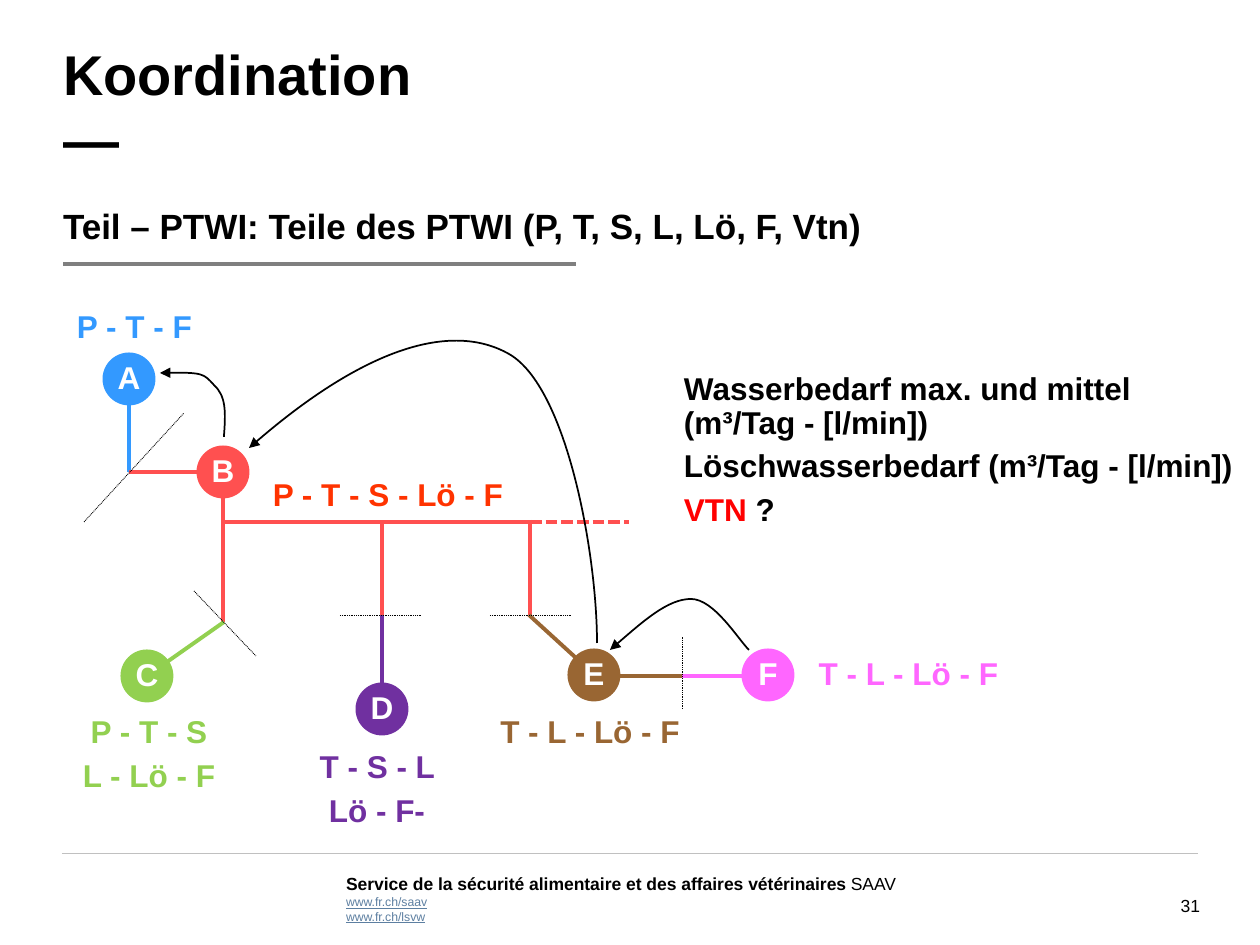
from lxml import etree
from pptx import Presentation
from pptx.dml.color import RGBColor
from pptx.enum.dml import MSO_LINE
from pptx.enum.shapes import MSO_CONNECTOR, MSO_SHAPE
from pptx.enum.text import MSO_ANCHOR, PP_ALIGN
from pptx.oxml.ns import qn
from pptx.util import Pt

STRAIGHT = MSO_CONNECTOR.STRAIGHT
OVAL = MSO_SHAPE.OVAL
TOP, MIDDLE = MSO_ANCHOR.TOP, MSO_ANCHOR.MIDDLE
LEFT, CENTER, RIGHT = PP_ALIGN.LEFT, PP_ALIGN.CENTER, PP_ALIGN.RIGHT
DOTTED, DASHED = MSO_LINE.ROUND_DOT, MSO_LINE.SQUARE_DOT

EMU_PER_PX = 914400 / 126
FONT = "Arial"
NODE_SIZE = 49
COLORS = {
    "text": "000000", "white": "FFFFFF", "alert": "FF0000",
    "link": "5D7FA1", "rule": "7F7F7F", "footer_rule": "C0C0C0",
    "A": "3399FF", "B": "FF5050", "B_label": "FF3300", "C": "92D050",
    "D": "7030A0", "E": "996633", "F": "FF66FF",
}
NODES = {"A": (129, 379), "B": (223, 472), "C": (147, 676),
         "D": (382, 709), "E": (594, 675), "F": (768, 675)}
PIPES = [
    ("A", 129, 378, 129, 472),
    ("B", 223, 472, 129, 472),
    ("B", 223, 483, 223, 522),
    ("B", 223, 522, 530, 522),
    ("B", 223, 522, 223, 622),
    ("B", 382, 522, 382, 616),
    ("B", 530, 520, 530, 615),
    ("C", 147, 676, 224, 622),
    ("D", 382, 709, 382, 615),
    ("E", 682, 676, 594, 676),
    ("E", 598, 678, 529, 615),
    ("F", 768, 676, 682, 676),
]
BOUNDARIES = [
    (84, 522, 184, 413),
    (194, 591, 256, 656),
    (340, 615, 422, 615),
    (490, 615, 571, 615),
    (682, 709, 682, 636),
]
LABELS = [
    ("A", ["P - T - F"], 33, 312, 203),
    ("B_label", ["P - T - S - Lö - F"], 250, 480, 276),
    ("C", ["P - T - S", "L - Lö - F"], 25, 717, 248),
    ("D", ["T - S - L ", "Lö - F- "], 273, 752, 217),
    ("E", ["T - L - Lö - F "], 486, 717, 217),
    ("F", ["T - L - Lö - F"], 800, 659, 217),
]
ARROWS = [
    [(610, 650), (639, 625), (668, 599), (691, 599),
     (714, 599), (738, 639), (749, 650)],
    [(249, 448), (360, 350), (451, 321), (509, 354),
     (567, 387), (597, 554), (597, 643)],
    [(160, 373), (203, 372), (204, 374), (214, 385),
     (226, 396), (226, 411), (224, 437)],
]


def px(*lengths):
    return [round(length * EMU_PER_PX) for length in lengths]


def rgb(name):
    return RGBColor.from_string(COLORS[name])


def format_run(run, size, color, bold=True):
    run.font.name = FONT
    run.font.size = Pt(size)
    run.font.bold = bold
    run.font.color.rgb = rgb(color)


def prepare_frame(frame, anchor=TOP):
    frame.margin_left = frame.margin_right = 0
    frame.margin_top = frame.margin_bottom = 0
    frame.vertical_anchor = anchor
    frame.word_wrap = True


def format_frame(frame, size, color, align=LEFT, spacing=None, after=0, bold=True):
    for paragraph in frame.paragraphs:
        paragraph.alignment = align
        paragraph.space_after = Pt(after)
        if spacing:
            paragraph.line_spacing = Pt(spacing)
        for run in paragraph.runs:
            format_run(run, size, color, bold)


def add_text(slide, lines, box, size, color, **style):
    frame = slide.shapes.add_textbox(*px(*box)).text_frame
    prepare_frame(frame)
    frame.text = "\n".join(lines)
    format_frame(frame, size, color, **style)
    return frame


def add_line(slide, ends, color, width, dash=None):
    line = slide.shapes.add_connector(STRAIGHT, *px(*ends))
    line.line.color.rgb = rgb(color)
    line.line.width = Pt(width)
    if dash:
        line.line.dash_style = dash
    etree.SubElement(line._element.spPr, qn("a:effectLst"))


def add_node(slide, name, center):
    x, y = center
    half = NODE_SIZE / 2
    node = slide.shapes.add_shape(OVAL, *px(x - half, y - half, NODE_SIZE, NODE_SIZE))
    node.shadow.inherit = False
    node.fill.solid()
    node.fill.fore_color.rgb = rgb(name)
    node.line.color.rgb = rgb(name)
    node.line.width = Pt(2.25)
    prepare_frame(node.text_frame, MIDDLE)
    node.text_frame.text = name
    format_frame(node.text_frame, 18, "white", CENTER, 19)


def add_curved_arrow(slide, points):
    builder = slide.shapes.build_freeform(*points[0], scale=EMU_PER_PX)
    builder.add_line_segments(points[1:], close=False)
    arrow = builder.convert_to_shape()
    arrow.shadow.inherit = False
    arrow.fill.background()
    arrow.line.color.rgb = rgb("text")
    arrow.line.width = Pt(1)
    etree.SubElement(arrow.line._get_or_add_ln(), qn("a:headEnd"), type="triangle")
    outline = next(arrow._element.iter(qn("a:path")))
    segments = outline.findall(qn("a:lnTo"))
    for start in range(0, len(segments), 3):
        curve = etree.SubElement(outline, qn("a:cubicBezTo"))
        for segment in segments[start:start + 3]:
            curve.append(segment[0])
            outline.remove(segment)


def add_heading(slide):
    title = slide.shapes.title
    title.left, title.top, title.width, title.height = px(63, 42, 1135, 131)
    prepare_frame(title.text_frame)
    title.text_frame.text = "Koordination\v—"
    format_frame(title.text_frame, 32, "text", spacing=37)
    add_text(slide, ["Teil – PTWI: Teile des PTWI (P, T, S, L, Lö, F, Vtn)"],
             (63, 204, 1153, 43), 20, "text", after=6)
    add_line(slide, (63, 264, 576, 264), "rule", 2.25)


def add_network(slide):
    for color, *ends in PIPES:
        add_line(slide, ends, color, 2.25)
    add_line(slide, (530, 522, 629, 522), "B", 2.25, DASHED)
    for ends in BOUNDARIES:
        add_line(slide, ends, "text", 0.5, DOTTED)
    for name, center in NODES.items():
        add_node(slide, name, center)
    for color, lines, left, top, width in LABELS:
        add_text(slide, lines, (left, top, width, 34 + 44 * (len(lines) - 1)),
                 18, color, align=CENTER, spacing=19, after=6)
    for points in ARROWS:
        add_curved_arrow(slide, points)


def add_demand(slide):
    demand = add_text(slide, ["Wasserbedarf max. und mittel (m³/Tag - [l/min])",
                              "Löschwasserbedarf (m³/Tag - [l/min])", "VTN"],
                      (684, 374, 552, 155), 18, "text", spacing=19, after=6)
    question = demand.paragraphs[-1]
    question.runs[0].font.color.rgb = rgb("alert")
    mark = question.add_run()
    mark.text = " ?"
    format_run(mark, 18, "text")


def add_footer(slide):
    add_line(slide, (62, 853, 1198, 853), "footer_rule", 0.25)
    footer = add_text(
        slide,
        ["Service de la sécurité alimentaire et des affaires vétérinaires ",
         "www.fr.ch/saav", "www.fr.ch/lsvw"],
        (346, 871, 662, 60), 7, "link", bold=False)
    office, *links = footer.paragraphs
    office.line_spacing = Pt(13.4)
    format_run(office.runs[0], 10, "text")
    acronym = office.add_run()
    acronym.text = "SAAV"
    format_run(acronym, 10, "text", False)
    for link in links:
        link.runs[0].font.underline = True
    add_text(slide, ["31"], (1144, 895, 56, 21), 10, "text", align=RIGHT, bold=False)


def main():
    deck = Presentation()
    deck.slide_width, deck.slide_height = px(1260, 945)
    slide = deck.slides.add_slide(deck.slide_layouts[5])
    add_footer(slide)
    add_heading(slide)
    add_network(slide)
    add_demand(slide)
    deck.save("out.pptx")


if __name__ == "__main__":
    main()
